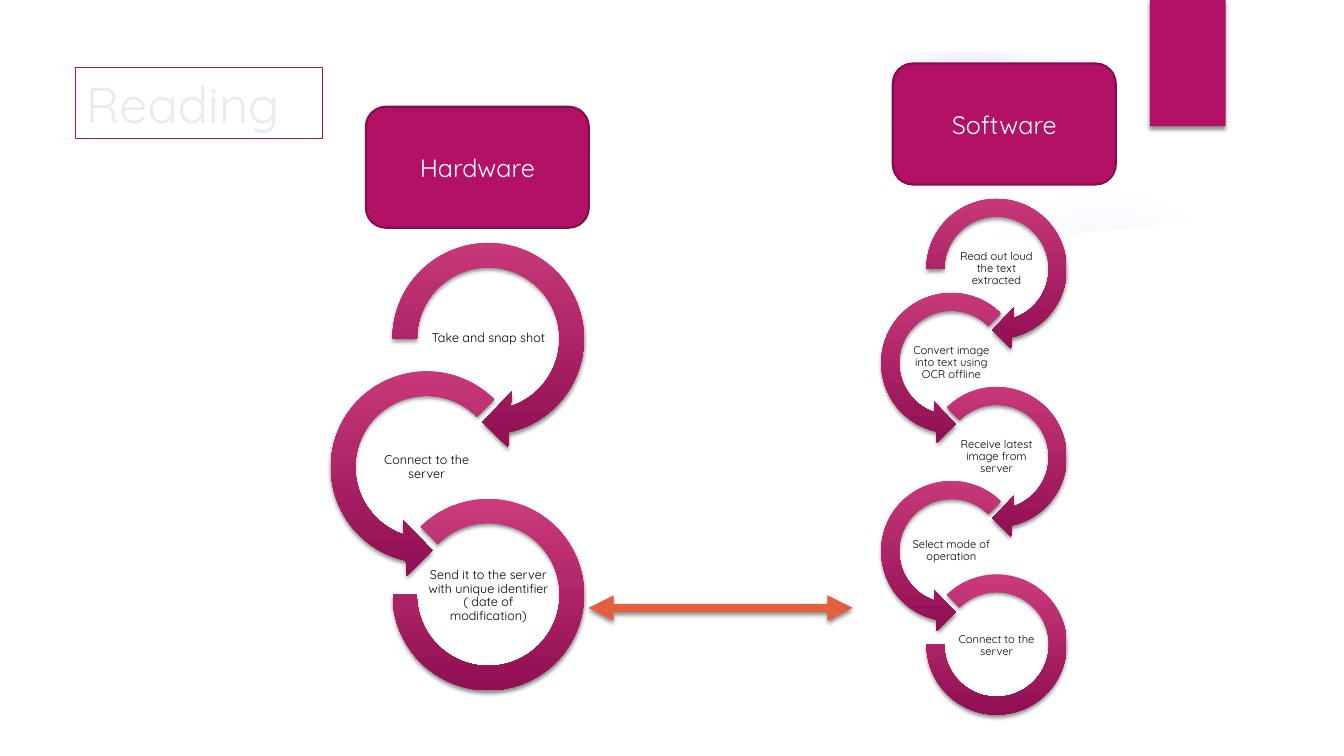
import pptx
import pptx.util
import pptx.dml.color
import pptx.enum.shapes
import pptx.enum.text
import pptx.oxml
import pptx.oxml.ns

Cm = pptx.util.Cm
Pt = pptx.util.Pt
RGB = pptx.dml.color.RGBColor
KIND = pptx.enum.shapes.MSO_SHAPE
ALIGN = pptx.enum.text.PP_ALIGN
MIDDLE = pptx.enum.text.MSO_ANCHOR.MIDDLE
NS = pptx.oxml.ns.nsdecls("a")
qn = pptx.oxml.ns.qn

PINK = RGB(0xB3, 0x11, 0x66)
EDGE = RGB(0x84, 0x0D, 0x4B)
LIGHT = RGB(0xCB, 0x3B, 0x7C)
DARK = RGB(0x90, 0x0E, 0x52)
ORANGE = RGB(0xE4, 0x5F, 0x3C)
PALE = RGB(0xEB, 0xEB, 0xEB)
LILAC = RGB(0x9B, 0x6B, 0xF2)
WHITE = RGB(0xFF, 0xFF, 0xFF)
BLACK = RGB(0, 0, 0)

SHADE = (f'<a:outerShdw {NS} blurRad="38100" dist="25400" dir="5400000" rotWithShape="0">'
         '<a:srgbClr val="000000"><a:alpha val="45000"/></a:srgbClr></a:outerShdw>')

# Ring shapes with their adjustments; the fourth value is where the arrow starts
RIGHT = (KIND.CIRCULAR_ARROW, (0.11, 11.42, 45, 135, 0.125))
FIRST = (KIND.CIRCULAR_ARROW, (0.11, 11.42, 45, 108, 0.125))
LEFT = (KIND.LEFT_CIRCULAR_ARROW, (0.11, 11.42, 63, 189, 0.125))
LAST = (KIND.BLOCK_ARC, (135, 108, 0.127))


class Deck:
    font = "Quicksand"

    def __init__(self):
        self.prs = pptx.Presentation()
        self.prs.slide_width, self.prs.slide_height = Cm(33.87), Cm(19.05)
        self.slide = self.prs.slides.add_slide(self.prs.slide_layouts[5])
        self.shapes = self.slide.shapes

    def text(self, frame, words, size, color, align=ALIGN.CENTER):
        frame.word_wrap = True
        frame.vertical_anchor = MIDDLE
        para = frame.paragraphs[0]
        para.text = words
        para.alignment = align
        para.font.name, para.font.size = self.font, Pt(size)
        para.font.color.rgb = color
        return para

    def title(self, words, *box):
        shape = self.shapes.title
        shape.left, shape.top, shape.width, shape.height = map(Cm, box)
        shape.line.color.rgb, shape.line.width = PINK, Pt(0.75)
        self.text(shape.text_frame, words, 36, PALE, ALIGN.LEFT)

    def shape(self, kind, box, fill=None, shade=False):
        shape = self.shapes.add_shape(kind, *map(Cm, box))
        shape.line.fill.background()
        shape.shadow.inherit = False
        if fill is not None:
            shape.fill.solid()
            shape.fill.fore_color.rgb = fill
        if shade:
            effects = shape.element.spPr.find(qn("a:effectLst"))
            effects.append(pptx.oxml.parse_xml(SHADE))
        return shape

    def glow(self, left, top, size, stops):
        """Draw a disc that fades out; stops are (position, opacity) in percent."""
        shape = self.shape(KIND.OVAL, (left, top, size, size))
        marks = "".join(
            f'<a:gs pos="{pos * 1000}"><a:srgbClr val="{LILAC}">'
            f'<a:alpha val="{alpha * 1000}"/></a:srgbClr></a:gs>' for pos, alpha in stops)
        fill = (f'<a:gradFill {NS}><a:gsLst>{marks}</a:gsLst><a:path path="circle">'
                '<a:fillToRect l="50000" t="50000" r="50000" b="50000"/></a:path></a:gradFill>')
        shape.element.spPr.find(qn("a:prstGeom")).addnext(pptx.oxml.parse_xml(fill))

    def panel(self, points):
        (left, top), *rest = points
        build = self.shapes.build_freeform(Cm(left), Cm(top))
        build.add_line_segments([(Cm(x), Cm(y)) for x, y in rest])
        shape = build.convert_to_shape()
        shape.fill.solid()
        shape.fill.fore_color.rgb = WHITE
        shape.line.fill.background()
        shape.shadow.inherit = False

    def head(self, words, left, top):
        shape = self.shape(KIND.ROUNDED_RECTANGLE, (left, top, 5.62, 3.05), PINK)
        shape.line.color.rgb, shape.line.width = EDGE, Pt(1.5)
        self.text(shape.text_frame, words, 18, WHITE)

    def ring(self, look, box):
        kind, values = look
        shape = self.shape(kind, box, shade=True)
        for spot, value in enumerate(values):
            shape.adjustments[spot] = value
        shape.fill.gradient()
        shape.fill.gradient_angle = 270
        for stop, color in zip(shape.fill.gradient_stops, (LIGHT, DARK)):
            stop.color.rgb = color

    def label(self, words, box, size):
        frame = self.shapes.add_textbox(*map(Cm, box)).text_frame
        frame.margin_left = frame.margin_right = Cm(0.03)
        frame.margin_top = frame.margin_bottom = Cm(0.03)
        self.text(frame, words, size, BLACK).line_spacing = 0.9

    def chain(self, left, top, size, font, steps):
        """Stack rings that swing right and left, closing with an arc."""
        for i, words in enumerate(steps):
            x = left - (0.277 * size if i % 2 else 0)
            y = top + 0.577 * size * i
            if i == len(steps) - 1:
                arc = 0.86 * size
                self.ring(LAST, (x + 0.07 * size, y + 0.065 * size, arc, arc))
            else:
                look = LEFT if i % 2 else RIGHT if i else FIRST
                self.ring(look, (x, y, size, size))
            box = (x + 0.222 * size, y + 0.363 * size, 0.556 * size, 0.276 * size)
            self.label(words, box, font)

    def arrow(self, left, right, y):
        line = self.shapes.add_connector(
            pptx.enum.shapes.MSO_CONNECTOR.STRAIGHT, Cm(left), Cm(y), Cm(right), Cm(y))
        line.line.color.rgb, line.line.width = ORANGE, Pt(6)
        stroke = line.element.spPr.find(qn("a:ln"))
        for end in ("headEnd", "tailEnd"):
            stroke.append(pptx.oxml.parse_xml(f'<a:{end} {NS} type="triangle"/>'))
        effects = pptx.oxml.parse_xml(f'<a:effectLst {NS}/>')
        effects.append(pptx.oxml.parse_xml(SHADE))
        line.element.spPr.append(effects)


def main():
    deck = Deck()
    deck.glow(23.9, 4.65, 7.82, ((0, 7), (36, 6), (69, 0), (100, 0)))
    deck.glow(22.23, 0.03, 4.45, ((0, 14), (36, 7), (73, 0), (100, 0)))
    deck.panel(((1.27, 5.18), (1.27, 17.78), (32.6, 17.78), (32.6, 5.18), (30.48, 5.51),
                (28.35, 5.77), (26.21, 5.97), (24.1, 6.12), (21.34, 6.25), (16.05, 6.3),
                (11.28, 6.12), (5.49, 5.69)))
    deck.shape(KIND.RECTANGLE, (0, 0, 33.87, 1.32), WHITE)
    deck.shape(KIND.RECTANGLE, (28.98, 0, 1.91, 3.18), PINK, shade=True)
    deck.title("Reading", 1.91, 1.7, 6.22, 1.8)
    deck.chain(9.5, 5.73, 5.61, 9, (
        "Take and snap shot",
        "Connect to the server",
        "Send it to the server with unique identifier ( date of modification)"))
    deck.chain(23.06, 4.72, 4.11, 8, (
        "Read out loud the text extracted",
        "Convert image into text using OCR offline",
        "Receive latest image from server",
        "Select mode of operation",
        "Connect to the server"))
    deck.head("Hardware", 9.22, 2.69)
    deck.head("Software", 22.5, 1.6)
    deck.arrow(14.83, 21.49, 15.32)
    deck.prs.save("out.pptx")


if __name__ == "__main__":
    main()
